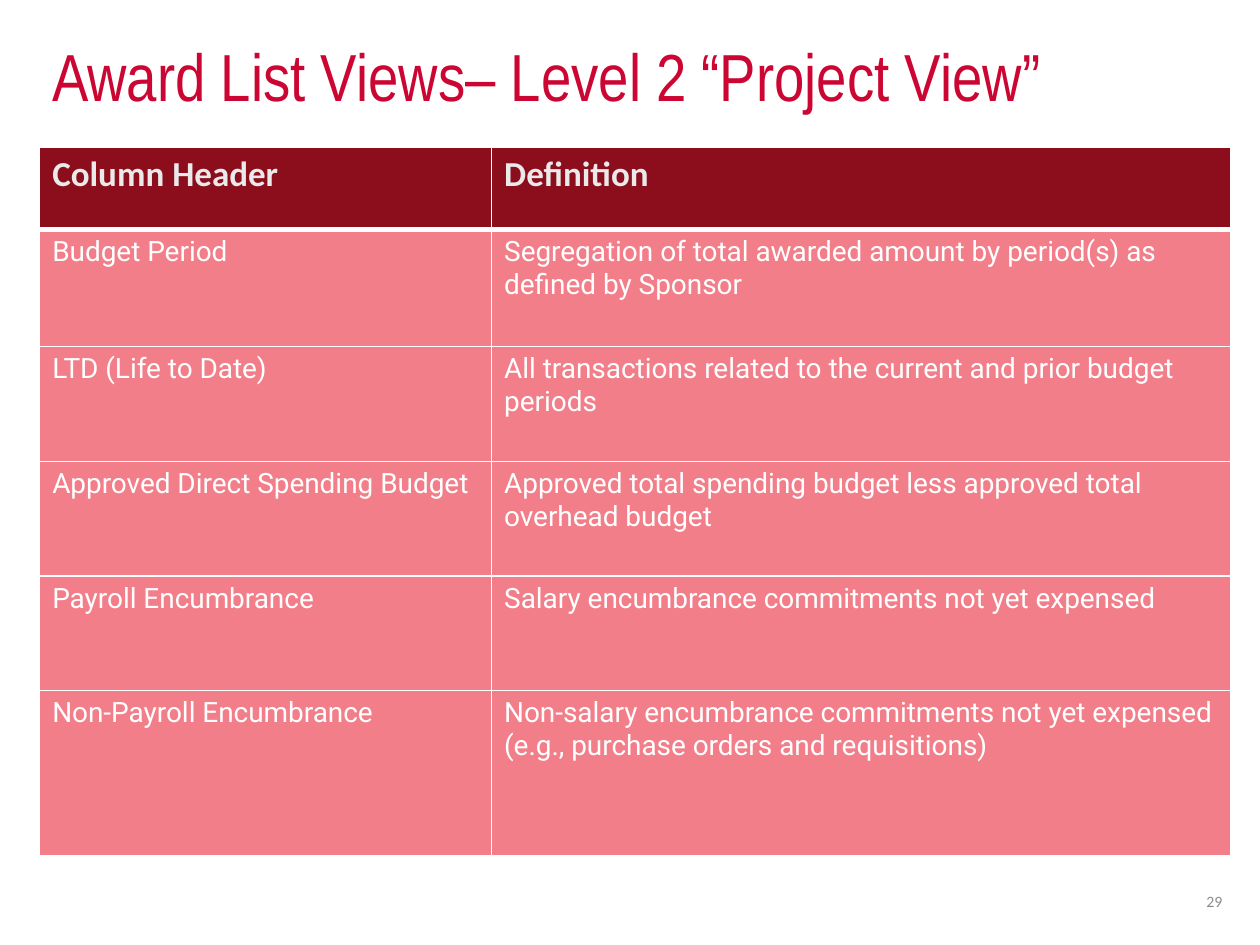
import pptx
import pptx.dml.color
import pptx.enum.text
import pptx.oxml
import pptx.oxml.ns
import pptx.util
from pptx.util import Cm

WHITE = "FFFFFF"
ALIGN = pptx.enum.text.PP_ALIGN
ANCHOR = pptx.enum.text.MSO_ANCHOR


def color(value):
    return pptx.dml.color.RGBColor.from_string(value)


def write(frame, text, size, font, fill, bold=False, align=ALIGN.LEFT, spacing=1.0):
    frame.word_wrap = True
    paragraph = frame.paragraphs[0]
    paragraph.alignment = align
    paragraph.line_spacing = spacing
    run = paragraph.add_run()
    run.text = text
    run.font.size = pptx.util.Pt(size)
    run.font.name = font
    run.font.bold = bold
    run.font.color.rgb = color(fill)


class SlideBuilder:
    header = dict(size=20, font="Calibri", fill="EAEAEA", bold=True)
    body = dict(size=16, font="Roboto", fill=WHITE)
    header_fill = "8C0E1C"
    body_fill = "F27E8A"

    def __init__(self, slide):
        self.slide = slide

    def text(self, text, left, top, width, height, **style):
        box = self.slide.shapes.add_textbox(Cm(left), Cm(top), Cm(width), Cm(height))
        box.text_frame.vertical_anchor = ANCHOR.MIDDLE
        write(box.text_frame, text, **style)

    def borders(self, cell, **widths):
        properties = cell._tc.get_or_add_tcPr()
        # Border lines come before the fill, in the order L, R, T, B
        for index, side in enumerate("LRTB"):
            width = pptx.util.Pt(widths.get(side, 1))
            line = pptx.oxml.parse_xml(
                f'<a:ln{side} {pptx.oxml.ns.nsdecls("a")} w="{width}"><a:solidFill>'
                f'<a:srgbClr val="{WHITE}"/></a:solidFill></a:ln{side}>')
            properties.insert(index, line)

    def table(self, rows, left, top, widths, heights):
        frame = self.slide.shapes.add_table(
            len(rows), len(widths), Cm(left), Cm(top), Cm(sum(widths)), Cm(sum(heights)))
        table = frame.table
        for column, width in zip(table.columns, widths):
            column.width = Cm(width)
        for index, (row, height) in enumerate(zip(rows, heights)):
            table.rows[index].height = Cm(height)
            for position, text in enumerate(row):
                cell = table.cell(index, position)
                cell.fill.solid()
                cell.fill.fore_color.rgb = color(self.body_fill if index else self.header_fill)
                write(cell.text_frame, text, **(self.body if index else self.header))
                self.borders(cell, B=1 if index else 3, T=3 if index == 1 else 1)


presentation = pptx.Presentation()
presentation.slide_width = Cm(25.4)
presentation.slide_height = Cm(19.05)
builder = SlideBuilder(presentation.slides.add_slide(presentation.slide_layouts[6]))

# Definitions table
definitions = [
    ("Column Header", "Definition"),
    ("Budget Period", "Segregation of total awarded amount by period(s) as defined by Sponsor"),
    ("LTD (Life to Date)", "All transactions related to the current and prior budget periods"),
    ("Approved Direct Spending Budget",
     "Approved total spending budget less approved total overhead budget"),
    ("Payroll Encumbrance", "Salary encumbrance commitments not yet expensed"),
    ("Non-Payroll Encumbrance",
     "Non-salary encumbrance commitments not yet expensed "
     "(e.g., purchase orders and requisitions)"),
]
builder.table(definitions, 0.8, 2.96, widths=[9.11, 14.9],
              heights=[1.67, 2.36] + [2.31] * 3 + [3.33])

# Title
builder.text("Award List Views– Level 2 “Project View”", 0.8, 0.91, 24.1, 1.42,
             size=38, font="Arial Narrow", fill="CC0633", spacing=0.9)

# Page number
builder.text("29", 24, 17.65, 0.89, 1.02,
             size=9, font="Calibri", fill="8C8C8C", align=ALIGN.RIGHT)

presentation.save("out.pptx")
